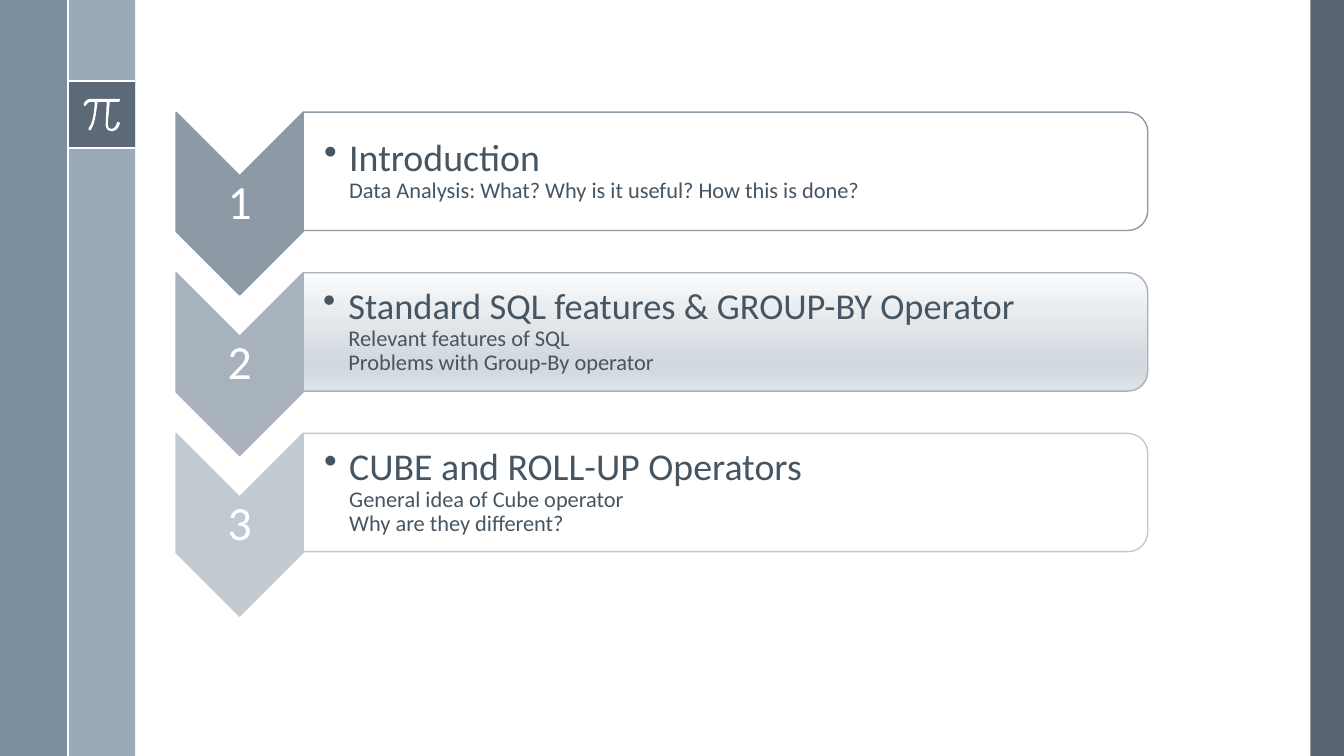
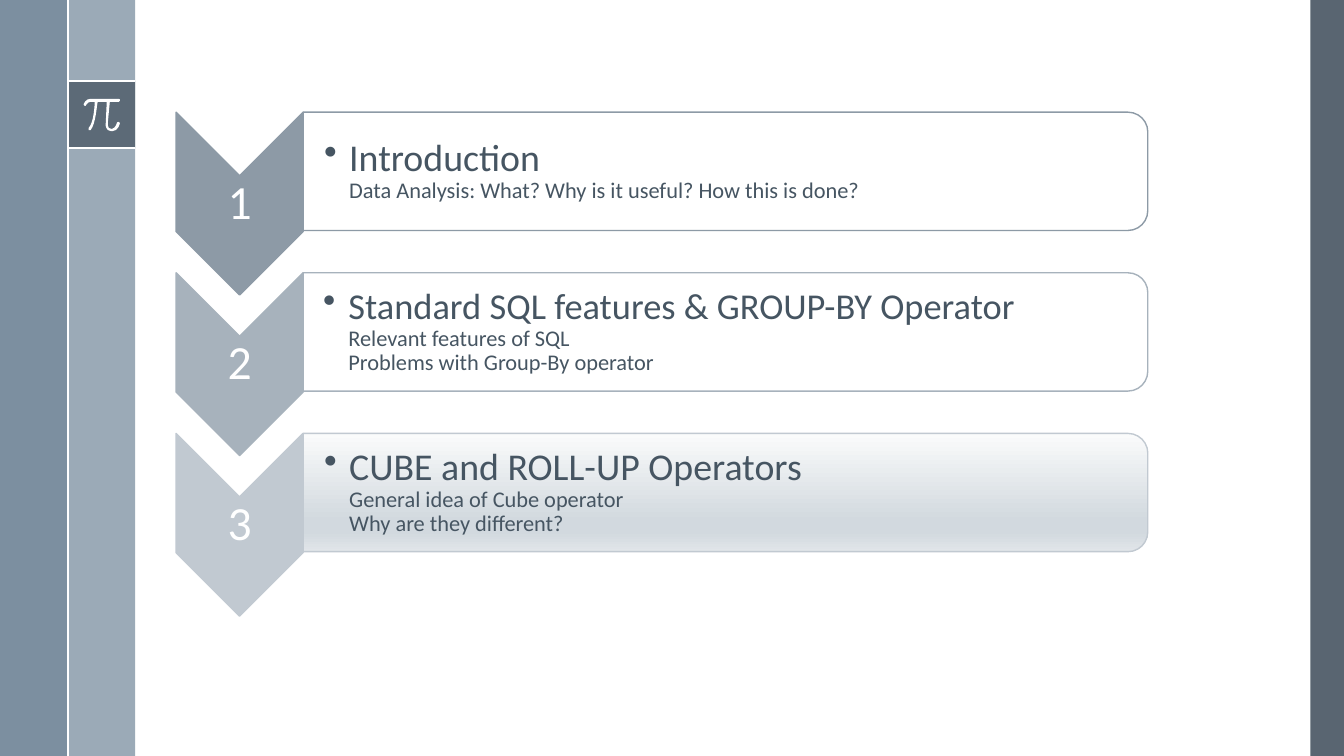
"""Builds two agenda slides, each highlighting one section of the talk."""
from lxml import etree
from pptx import Presentation
from pptx.dml.color import RGBColor
from pptx.enum.shapes import MSO_CONNECTOR as LINE, MSO_SHAPE as SHAPE
from pptx.enum.text import MSO_ANCHOR as ANCHOR, PP_ALIGN as ALIGN
from pptx.oxml import parse_xml
from pptx.oxml.ns import nsdecls, qn
from pptx.util import Inches, Pt

WHITE = RGBColor(0xFF, 0xFF, 0xFF)
SLATE = RGBColor(0x47, 0x55, 0x62)
STEEL = RGBColor(0x6A, 0x80, 0x93)
MIST = RGBColor(0x9B, 0xAA, 0xB7)
INK = RGBColor(0x46, 0x55, 0x62)
STEP_COLORS = [
    RGBColor(0x8D, 0x9A, 0xA6),
    RGBColor(0xA7, 0xB2, 0xBC),
    RGBColor(0xC1, 0xC9, 0xD1),
]
HIGHLIGHT = [(0, "FAFBFB"), (74, "D2D9DF"), (83, "D2D9DF"), (100, "E1E5E9")]

FONT = "Calibri"
COLUMNS = 20
ROWS = 11.25
STEP_TOP, STEP_PITCH = 1.67, 2.39
TILE_LEFT, TILE_TOP, TILE_SIZE = 1.01, 1.21, 0.99

SECTIONS = [
    ("Introduction", 27,
     ["Data Analysis: What? Why is it useful? How this is done?"]),
    ("Standard SQL features & GROUP-BY Operator", 26,
     ["Relevant features of SQL", "Problems with Group-By operator"]),
    ("CUBE and ROLL-UP Operators", 27,
     ["General idea of Cube operator", "Why are they different?"]),
]

PI_LEFT, PI_TOP = 83, 98
PI_START = (118, 98)
PI_CURVES = [
    [(90, 98)],
    [(85, 98), (83, 103), (83, 104)],
    [(83, 104), (83, 105), (84, 105)],
    [(85, 105)],
    [(85, 105), (87, 101), (90, 101)],
    [(94, 101)],
    [(94, 105), (93, 122), (88, 127)],
    [(87, 128), (87, 128), (88, 129)],
    [(90, 129)],
    [(95, 123), (96, 105), (97, 101)],
    [(106, 101)],
    [(105, 122)],
    [(105, 122), (104, 126), (107, 129)],
    [(108, 130), (109, 130), (110, 130)],
    [(111, 130), (111, 130), (112, 130)],
    [(117, 130), (119, 123), (119, 122)],
    [(119, 122), (118, 121), (118, 121)],
    [(117, 121), (116, 121), (116, 122)],
    [(116, 122), (115, 127), (111, 128)],
    [(110, 128), (109, 128), (108, 127)],
    [(107, 126), (107, 123), (107, 122)],
    [(109, 101)],
    [(118, 101)],
    [(119, 101), (119, 100), (119, 100)],
    [(119, 99), (119, 98), (118, 98)],
]


class Deck:
    """Holds the style, the grid and the current slide."""

    def __init__(self):
        """Create a wide presentation and its grid unit."""
        self.prs = Presentation()
        self.prs.slide_width = Inches(40 / 3)
        self.prs.slide_height = Inches(7.5)
        self.unit = self.prs.slide_width / COLUMNS
        self.slide = None

    def box(self, *cells):
        """Turn grid cells into lengths."""
        return [round(c * self.unit) for c in cells]

    def new_slide(self):
        """Start a slide with the side bands and the symbol tile."""
        self.slide = self.prs.slides.add_slide(self.prs.slide_layouts[6])
        right = TILE_LEFT + 1
        self.band(19.5, 0, 0.5, ROWS, SLATE, 90)
        self.band(TILE_LEFT, 0, 1, ROWS, MIST)
        self.band(0, 0, TILE_LEFT, ROWS, STEEL, 88)
        self.band(TILE_LEFT, TILE_TOP, 1, TILE_SIZE, SLATE, 75)
        for y in (TILE_TOP, TILE_TOP + TILE_SIZE):
            self.line(TILE_LEFT, y, right, y)
        self.pi_symbol()
        self.line(TILE_LEFT, 0, TILE_LEFT, ROWS)

    def shape(self, kind, x, y, w, h, fill, line=None):
        """Add a preset shape."""
        sp = self.slide.shapes.add_shape(kind, *self.box(x, y, w, h))
        self.paint(sp, fill, line)
        return sp

    def paint(self, sp, fill, line=None):
        """Give a shape its fill and outline, without a shadow."""
        sp.shadow.inherit = False
        if fill is None:
            sp.fill.background()
        else:
            sp.fill.solid()
            sp.fill.fore_color.rgb = fill
        if line is None:
            sp.line.fill.background()
        else:
            sp.line.color.rgb = line
            sp.line.width = Pt(1)

    def fade(self, sp, opacity):
        """Make a flat fill see-through."""
        clr = sp._element.spPr.find(qn("a:solidFill"))[0]
        etree.SubElement(clr, qn("a:alpha"), val=str(opacity * 1000))

    def band(self, x, y, w, h, color, opacity=100):
        """Add a rectangle, optionally see-through."""
        sp = self.shape(SHAPE.RECTANGLE, x, y, w, h, color)
        if opacity < 100:
            self.fade(sp, opacity)

    def line(self, x1, y1, x2, y2):
        """Add a white rule."""
        cn = self.slide.shapes.add_connector(
            LINE.STRAIGHT, *self.box(x1, y1, x2, y2))
        cn.line.color.rgb = WHITE
        cn.line.width = Pt(1.5)
        etree.SubElement(cn._element.spPr, qn("a:effectLst"))

    def pi_symbol(self):
        """Draw the pi sign in hundredths of an inch."""
        builder = self.slide.shapes.build_freeform(*PI_START, scale=Inches(0.01))
        builder.add_line_segments([curve[-1] for curve in PI_CURVES], close=True)
        sp = builder.convert_to_shape()
        self.paint(sp, WHITE)
        segments = list(sp._element.spPr.iter(qn("a:lnTo")))
        for segment, curve in zip(segments, PI_CURVES):
            if len(curve) == 3:
                segment.getparent().replace(segment, self.cubic(curve))

    def cubic(self, curve):
        """Return a curved outline segment."""
        bend = etree.Element(qn("a:cubicBezTo"))
        for x, y in curve:
            etree.SubElement(bend, qn("a:pt"), x=str(x - PI_LEFT), y=str(y - PI_TOP))
        return bend

    def turned(self, kind, x, y, w, h, fill, line):
        """Add a shape turned a quarter clockwise that covers the given box."""
        sp = self.shape(kind, x + (w - h) / 2, y + (h - w) / 2, h, w, fill, line)
        sp.rotation = 90
        return sp

    def gradient(self, sp):
        """Replace a flat fill by the vertical highlight."""
        stops = "".join(
            f'<a:gs pos="{pos * 1000}"><a:srgbClr val="{color}"/></a:gs>'
            for pos, color in HIGHLIGHT)
        spPr = sp._element.spPr
        spPr.replace(spPr.find(qn("a:solidFill")), parse_xml(
            f'<a:gradFill {nsdecls("a")} rotWithShape="0"><a:gsLst>{stops}</a:gsLst>'
            '<a:lin ang="5400000" scaled="0"/></a:gradFill>'))

    def text_box(self, x, y, w, h, left=0.02):
        """Add a centred-height text box and return its paragraph."""
        tf = self.slide.shapes.add_textbox(*self.box(x, y, w, h)).text_frame
        tf.word_wrap = True
        tf.vertical_anchor = ANCHOR.MIDDLE
        tf.margin_left = Inches(left)
        tf.margin_top = tf.margin_right = tf.margin_bottom = Inches(0.02)
        p = tf.paragraphs[0]
        p.line_spacing = 0.9
        return p

    def run(self, p, text, size, color):
        """Add a run of text."""
        r = p.add_run()
        r.text = text
        r.font.name = FONT
        r.font.size = Pt(size)
        r.font.color.rgb = color

    def step(self, index, highlighted):
        """Add a numbered chevron and its panel."""
        title, size, details = SECTIONS[index]
        color = STEP_COLORS[index]
        y = STEP_TOP + index * STEP_PITCH

        self.turned(SHAPE.CHEVRON, 2.62, y, 1.89, 2.72, color, color)
        p = self.text_box(2.62, y + 0.96, 1.89, 0.81)
        p.alignment = ALIGN.CENTER
        self.run(p, str(index + 1), 34, WHITE)

        sp = self.turned(SHAPE.ROUND_2_SAME_RECTANGLE, 4.51, y, 12.57, 1.76,
                         WHITE if index else None, color)
        if highlighted:
            self.gradient(sp)
        elif index:
            self.fade(sp, 90)
        p = self.text_box(4.51, y + 0.08, 12.48, 1.59, left=size / 130)
        p.level = 1
        pPr = p._p.get_or_add_pPr()
        pPr.set("marL", str(Inches(0.25)))
        pPr.set("indent", str(-Inches(0.25)))
        etree.SubElement(pPr, qn("a:buChar"), char="••")
        self.run(p, title, size, INK)
        for detail in details:
            p.add_line_break()
            etree.SubElement(p._p[-1], qn("a:rPr"), sz="1600")
            self.run(p, detail, 16, INK)


def main():
    """Build both slides and save them."""
    deck = Deck()
    for current in (1, 2):
        deck.new_slide()
        for index in range(len(SECTIONS)):
            deck.step(index, index == current)
    deck.prs.save("out.pptx")


if __name__ == "__main__":
    main()
